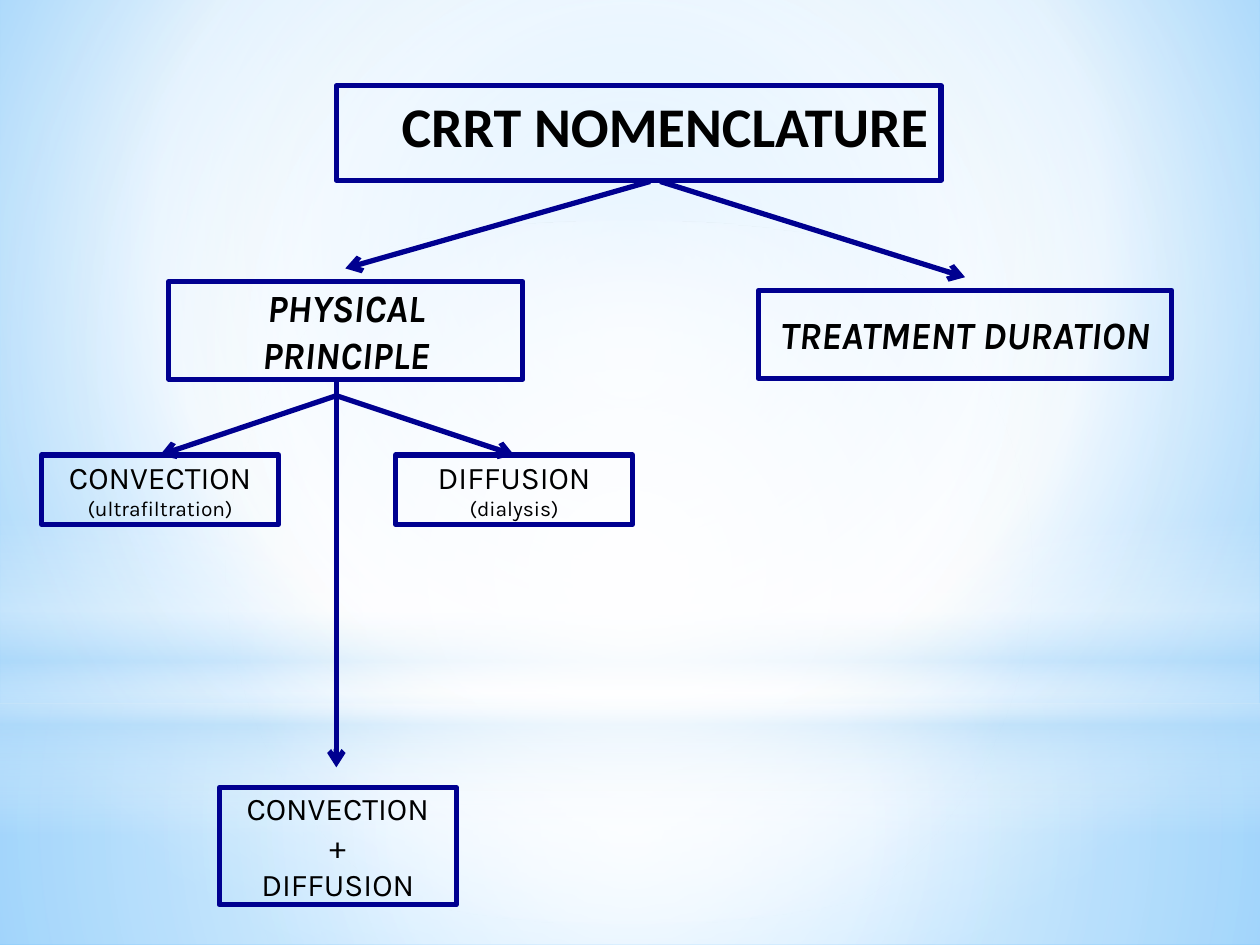
"""Build the CRRT nomenclature tree slide."""
from lxml.etree import SubElement
from pptx import Presentation
from pptx.dml.color import RGBColor
from pptx.enum.shapes import MSO_CONNECTOR as Connector, MSO_SHAPE as Shape
from pptx.enum.text import MSO_ANCHOR as Anchor, PP_ALIGN as Align
from pptx.oxml.ns import qn
from pptx.util import Pt

COLORS = {"navy": "000090", "black": "000000", "white": "FFFFFF",
          "pale": "B4DCFA", "sky": "9ED5FF", "blue": "5BB9FF"}
CENTER = (50, 50, 50, 50)


def set_gradient(fill, holder, stops, focus):
    """Fill with (position, color, opacity) stops, radial to focus or vertical."""
    fill.background()
    old_fill = holder.find(qn("a:noFill"))
    gradient = SubElement(holder, qn("a:gradFill"), rotWithShape="1")
    stop_list = SubElement(gradient, qn("a:gsLst"))
    for position, color, opacity in stops:
        stop = SubElement(stop_list, qn("a:gs"), pos=str(position * 1000))
        rgb = SubElement(stop, qn("a:srgbClr"), val=COLORS[color])
        if opacity < 100:
            SubElement(rgb, qn("a:alpha"), val=str(opacity * 1000))
    if focus:
        path = SubElement(gradient, qn("a:path"), path="circle")
        sides = {side: str(share * 1000) for side, share in zip("ltrb", focus)}
        SubElement(path, qn("a:fillToRect"), **sides)
    else:
        SubElement(gradient, qn("a:lin"), ang="5400000", scaled="0")
    holder.replace(old_fill, gradient)


presentation = Presentation()
presentation.slide_width, presentation.slide_height = Pt(720), Pt(540)
slide = presentation.slides.add_slide(presentation.slide_layouts[6])

background_fill = slide.background.fill
set_gradient(background_fill, slide.element.find(".//" + qn("p:bgPr")),
             [(0, "sky", 100), (60, "white", 100), (100, "blue", 100)], (20, 10, 20, 60))

glows = [
    (Shape.RECTANGLE, 401.8, 138.2, CENTER,
     [(0, "white", 91), (37, "white", 76), (100, "pale", 79)]),
    (Shape.RECTANGLE, 0, 401.8, CENTER,
     [(0, "white", 89), (48, "white", 62), (100, "pale", 79)]),
    (Shape.RECTANGLE, 296.6, 180, None,
     [(0, "white", 0), (29, "white", 30), (45, "pale", 40),
      (55, "white", 26), (65, "pale", 60), (100, "white", 0)]),
    (Shape.OVAL, 126, 401.8, CENTER, [(0, "white", 100), (56, "white", 0)]),
]
for kind, top, height, focus, stops in glows:
    glow = slide.shapes.add_shape(kind, 0, Pt(top), Pt(720), Pt(height))
    glow.shadow.inherit = False
    glow.line.fill.background()
    set_gradient(glow.fill, glow.element.spPr, stops, focus)

heading = {"name": "Karla", "bold": True, "italic": True}
plain = {"name": "Karla"}
boxes = {
    "title": ((192.2, 49, 345.6, 54), [("CRRT NOMENCLATURE", 32)],
              {"name": "Calibri", "bold": True}, Align.RIGHT, Anchor.TOP),
    "principle": ((96.5, 161, 202.3, 55.7), [("PHYSICAL PRINCIPLE", 22)],
                  heading, Align.CENTER, Anchor.MIDDLE),
    "duration": ((433.4, 165.9, 236.2, 50.4), [("TREATMENT DURATION", 22)],
                 heading, Align.CENTER, Anchor.MIDDLE),
    "both": ((125.3, 450, 135.4, 67), [("CONVECTION", 18), ("+", 18), ("DIFFUSION", 18)],
             plain, Align.CENTER, Anchor.MIDDLE),
    "convection": ((23.8, 260, 135.4, 39.6), [("CONVECTION", 18), ("(ultrafiltration)", 12)],
                   plain, Align.CENTER, Anchor.MIDDLE),
    "diffusion": ((226.1, 260, 135.4, 39.6), [("DIFFUSION", 18), ("(dialysis)", 12)],
                  plain, Align.CENTER, Anchor.MIDDLE),
}
shapes = {}
for name, (bounds, lines, style, alignment, anchor) in boxes.items():
    shape = shapes[name] = slide.shapes.add_shape(Shape.RECTANGLE, *map(Pt, bounds))
    shape.shadow.inherit = False
    shape.fill.background()
    shape.line.color.rgb = RGBColor.from_string(COLORS["navy"])
    shape.line.width = Pt(3)
    frame = shape.text_frame
    frame.word_wrap = True
    frame.vertical_anchor = anchor
    for index, (text, size) in enumerate(lines):
        paragraph = frame.add_paragraph() if index else frame.paragraphs[0]
        paragraph.text = text
        paragraph.alignment = alignment
        paragraph.font.size = Pt(size)
        paragraph.font.color.rgb = RGBColor.from_string(COLORS["black"])
        for attribute, value in style.items():
            setattr(paragraph.font, attribute, value)

arrows = [
    (371.5, 103.7, 197.3, 153.4, None),
    (377.3, 103.7, 551.5, 158.4, None),
    (192.2, 216, 192.2, 438.5, None),
    (192.2, 226.1, 91.5, 260, "convection"),
    (192.2, 226.1, 293.8, 260, "diffusion"),
]
for *ends, target in arrows:
    arrow = slide.shapes.add_connector(Connector.STRAIGHT, *map(Pt, ends))
    if target:
        arrow.end_connect(shapes[target], 0)
    arrow.line.color.rgb = RGBColor.from_string(COLORS["navy"])
    arrow.line.width = Pt(3)
    SubElement(arrow.line._get_or_add_ln(), qn("a:tailEnd"), type="arrow")
    SubElement(arrow.element.spPr, qn("a:effectLst"))

presentation.save("out.pptx")
